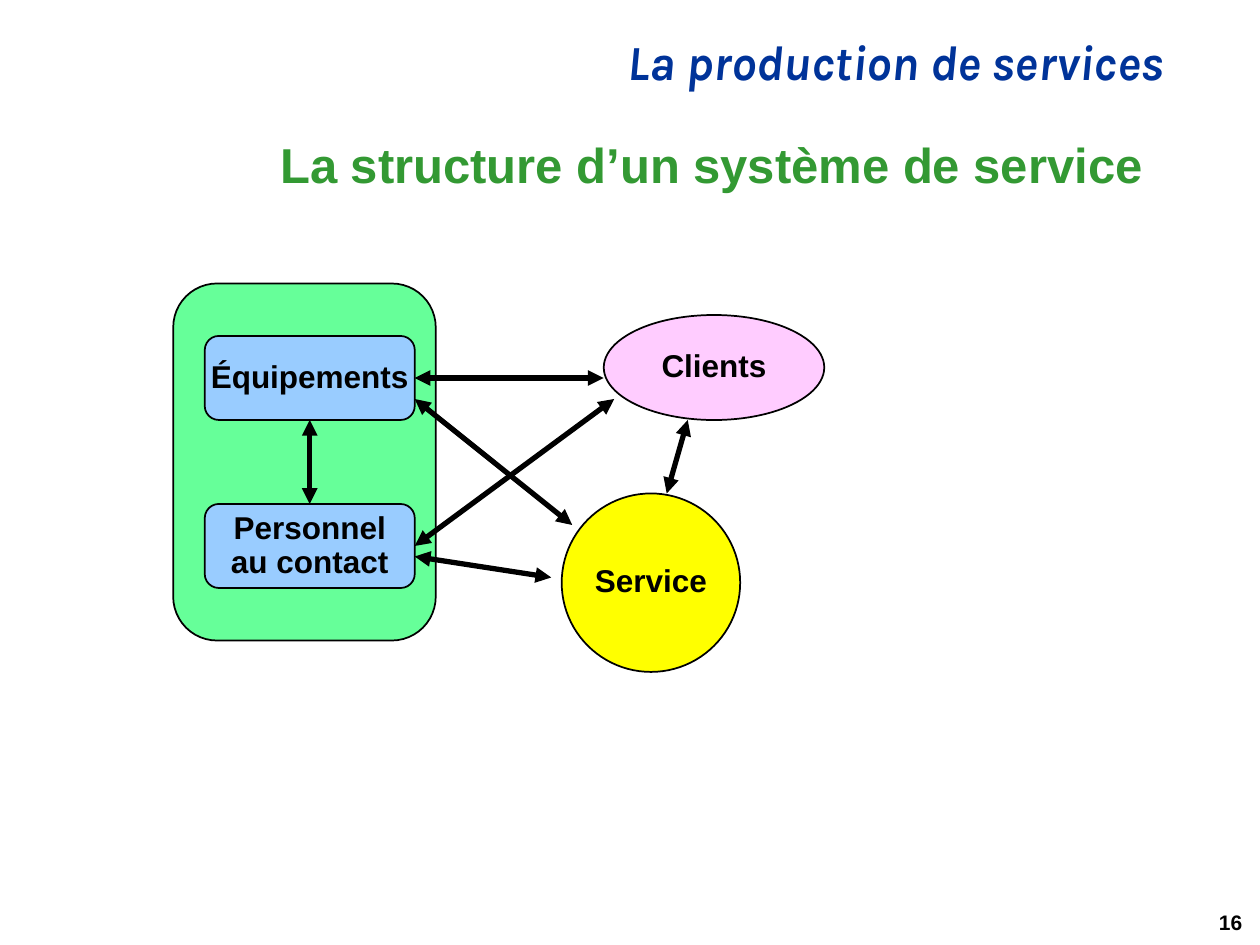
import dataclasses

import lxml.etree
import pptx
import pptx.dml.color
import pptx.enum.shapes
import pptx.enum.text
import pptx.oxml.ns
import pptx.util

Pt = pptx.util.Pt
qn = pptx.oxml.ns.qn
Shape = pptx.enum.shapes.MSO_SHAPE
Align = pptx.enum.text.PP_ALIGN
Anchor = pptx.enum.text.MSO_ANCHOR


@dataclasses.dataclass(frozen=True)
class Theme:
    font: str = "Arial"
    accent: str = "Karla"
    ink: str = "000000"
    navy: str = "003399"
    green: str = "339933"
    mint: str = "66FF99"
    sky: str = "99CCFF"
    pink: str = "FFCCFF"
    yellow: str = "FFFF00"
    head: int = 28
    label: int = 18
    small: int = 12
    edge: int = 1
    arrow: int = 3
    round: float = 0.167


theme = Theme()


def rgb(code):
    return pptx.dml.color.RGBColor.from_string(code)


def write(frame, text, size, color, align, anchor, font=theme.font, wrap=True):
    frame.word_wrap = wrap
    frame.auto_size = pptx.enum.text.MSO_AUTO_SIZE.NONE
    frame.vertical_anchor = anchor
    frame.text = text
    para = frame.paragraphs[0]
    para.alignment = align
    para.line_spacing = 0.9
    para.font.name = font
    para.font.size = Pt(size)
    para.font.bold = True
    para.font.color.rgb = rgb(color)
    return para


def place(shape, box):
    shape.left, shape.top, shape.width, shape.height = map(Pt, box)


def add_text(slide, box, *style, **more):
    frame = slide.shapes.add_textbox(*map(Pt, box)).text_frame
    return write(frame, *style, **more)


def add_node(slide, kind, box, fill, text="", wrap=False):
    node = slide.shapes.add_shape(kind, *map(Pt, box))
    node.shadow.inherit = False
    node.fill.solid()
    node.fill.fore_color.rgb = rgb(fill)
    node.line.color.rgb = rgb(theme.ink)
    node.line.width = Pt(theme.edge)
    if kind == Shape.ROUNDED_RECTANGLE:
        node.adjustments[0] = theme.round
    if text:
        write(node.text_frame, text, theme.label, theme.ink,
              Align.CENTER, Anchor.MIDDLE, wrap=wrap)


def add_arrow(slide, ends):
    link = slide.shapes.add_connector(
        pptx.enum.shapes.MSO_CONNECTOR.STRAIGHT, *map(Pt, ends))
    link.line.color.rgb = rgb(theme.ink)
    link.line.width = Pt(theme.arrow)
    # Arrowheads at both ends, no shadow
    props = link._element.spPr
    line = props.find(qn("a:ln"))
    for tag in ("a:headEnd", "a:tailEnd"):
        lxml.etree.SubElement(line, qn(tag), type="triangle")
    lxml.etree.SubElement(props, qn("a:effectLst"))


def add_heads(slide, box):
    left, top, width, height = box
    # Course name
    para = add_text(slide, (left, top, width, 37.5),
                    "La production de services", theme.head, theme.navy,
                    Align.RIGHT, Anchor.TOP, font=theme.accent)
    para.font.italic = True
    # Slide title
    title = slide.shapes.title
    place(title, (left, top + height - 36, width - 12, 36))
    write(title.text_frame, "La structure d’un système de service",
          theme.head, theme.green, Align.RIGHT, Anchor.MIDDLE)


def add_system(slide, box):
    left, top, width, height = box
    rect, oval = Shape.ROUNDED_RECTANGLE, Shape.OVAL
    # Company panel with its two parts, then clients and service
    nodes = [
        (rect, (0, 0, 150, height - 18), theme.mint),
        (rect, (18, 30, 120, 48), theme.sky, "Équipements"),
        (rect, (18, 126, 120, 48), theme.sky, "Personnel au contact", True),
        (oval, (width - 126, 18, 126, 60), theme.pink, "Clients"),
        (oval, (222, height - 102, 102, 102), theme.yellow, "Service"),
    ]
    for kind, (x, y, w, h), *style in nodes:
        add_node(slide, kind, (left + x, top + y, w, h), *style)
    # Two-way links
    links = [
        (78, 126, 78, 78),
        (138, 54, 246, 54),
        (138, 150, 252, 66),
        (138, 66, 228, 138),
        (138, 156, 216, 168),
        (282, 120, 294, 78),
    ]
    for x1, y1, x2, y2 in links:
        add_arrow(slide, (left + x1, top + y1, left + x2, top + y2))


def add_number(slide, box):
    add_text(slide, box, "16", theme.small, theme.ink,
             Align.RIGHT, Anchor.BOTTOM)


def main():
    deck = pptx.Presentation()
    deck.slide_width, deck.slide_height = Pt(720), Pt(540)
    slide = deck.slides.add_slide(deck.slide_layouts.get_by_name("Title Only"))
    add_heads(slide, (90, 18, 582, 96))
    add_system(slide, (99, 162, 372, 222))
    add_number(slide, (490, 499, 227, 39))
    deck.save("out.pptx")


if __name__ == "__main__":
    main()
